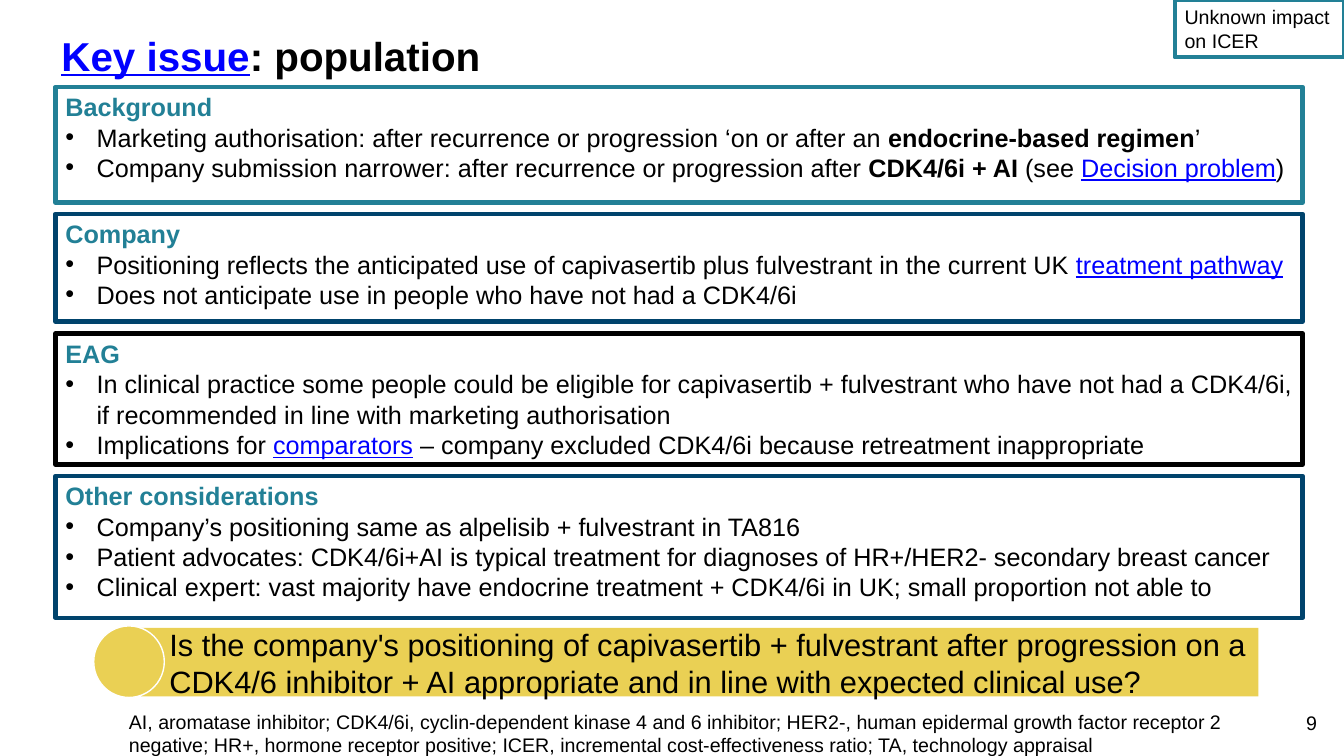
from lxml import etree
from pptx import Presentation
from pptx.dml.color import RGBColor
from pptx.enum.shapes import MSO_SHAPE
from pptx.enum.text import MSO_ANCHOR, MSO_AUTO_SIZE, PP_ALIGN
from pptx.oxml.ns import qn
from pptx.util import Inches, Pt

RECTANGLE, OVAL = MSO_SHAPE.RECTANGLE, MSO_SHAPE.OVAL
TOP, MIDDLE = MSO_ANCHOR.TOP, MSO_ANCHOR.MIDDLE
LEFT, RIGHT = PP_ALIGN.LEFT, PP_ALIGN.RIGHT
NO_AUTOFIT = MSO_AUTO_SIZE.NONE

COLOURS = {
    "text": "000000",
    "link": "0000FF",
    "teal": "228096",
    "navy": "00436C",
    "yellow": "EAD054",
    "white": "FFFFFF",
}

# Run styles used inside paragraphs
RUN_STYLES = {
    "plain": {"colour": "text", "bold": False, "underline": False},
    "bold": {"colour": "text", "bold": True, "underline": False},
    "link": {"colour": "link", "bold": False, "underline": True},
    "heading": {"colour": "teal", "bold": True, "underline": False},
    "title_link": {"colour": "link", "bold": True, "underline": True},
}

# Each panel: top, height, border colour, heading, bullets made of (text, style) runs
PANELS = [
    (0.86, 1.15, "teal", "Background", [
        [("Marketing authorisation: after recurrence or progression ‘on or after an ", "plain"),
         ("endocrine-based regimen", "bold"), ("’", "plain")],
        [("Company submission narrower: after recurrence or progression after ", "plain"),
         ("CDK4/6i + AI ", "bold"), ("(see ", "plain"),
         ("Decision problem", "link"), (")", "plain")],
    ]),
    (2.12, 1.07, "navy", "Company", [
        [("Positioning reflects the anticipated use of capivasertib plus fulvestrant "
          "in the current UK ", "plain"), ("treatment pathway", "link")],
        [("Does not anticipate use in people who have not had a CDK4/6i", "plain")],
    ]),
    (3.31, 1.3, "text", "EAG", [
        [("In clinical practice some people could be eligible for capivasertib + fulvestrant "
          "who have not had a CDK4/6i, if recommended in line with marketing authorisation",
          "plain")],
        [("Implications for ", "plain"), ("comparators", "link"),
         (" – company excluded CDK4/6i because retreatment inappropriate", "plain")],
    ]),
    (4.72, 1.41, "navy", "Other considerations", [
        [("Company’s positioning same as alpelisib + fulvestrant in TA816", "plain")],
        [("Patient advocates: CDK4/6i+AI is typical treatment for diagnoses of HR+/HER2- "
          "secondary breast cancer", "plain")],
        [("Clinical expert: vast majority have endocrine treatment + CDK4/6i in UK; "
          "small proportion not able to", "plain")],
    ]),
]


class SlideBuilder:
    font_name = "Arial"
    bullet_indent = Inches(0.31)

    def __init__(self, presentation):
        self.slide = presentation.slides.add_slide(presentation.slide_layouts[5])

    def colour(self, name):
        return RGBColor.from_string(COLOURS[name])

    def set_frame(self, shape, anchor=TOP, left_inset=0.1):
        frame = shape.text_frame
        values = {
            "word_wrap": True, "auto_size": NO_AUTOFIT, "vertical_anchor": anchor,
            "margin_left": Inches(left_inset), "margin_right": Inches(0.1),
            "margin_top": Inches(0.05), "margin_bottom": Inches(0.05),
        }
        for name, value in values.items():
            setattr(frame, name, value)
        return frame

    def fill_paragraph(self, paragraph, runs, size, align=LEFT, spacing=1.0, bullet=False):
        if bullet:
            properties = paragraph._p.get_or_add_pPr()
            properties.set("marL", str(self.bullet_indent))
            properties.set("indent", str(-self.bullet_indent))
            etree.SubElement(properties, qn("a:buFont"), typeface=self.font_name)
            etree.SubElement(properties, qn("a:buChar"), char="•")
        paragraph.alignment = align
        paragraph.line_spacing = spacing
        for text, style in runs:
            run = paragraph.add_run()
            run.text = text
            values = {"name": self.font_name, "size": Pt(size), **RUN_STYLES[style]}
            run.font.color.rgb = self.colour(values.pop("colour"))
            for name, value in values.items():
                setattr(run.font, name, value)

    def title(self, box, runs, size):
        shape = self.slide.shapes.title
        shape.left, shape.top, shape.width, shape.height = map(Inches, box)
        self.fill_paragraph(self.set_frame(shape).paragraphs[0], runs, size, spacing=0.9)

    def shape(self, kind, box, fill=None, line=None, line_width=3):
        shape = self.slide.shapes.add_shape(kind, *map(Inches, box))
        shape.shadow.inherit = False
        if fill:
            shape.fill.solid()
            shape.fill.fore_color.rgb = self.colour(fill)
        else:
            shape.fill.background()
        if line:
            shape.line.color.rgb = self.colour(line)
            shape.line.width = Pt(line_width)
        else:
            shape.line.fill.background()
        return shape

    def panel(self, top, height, line, heading, bullets):
        shape = self.shape(RECTANGLE, (0.55, top, 12.37, height), line=line)
        frame = self.set_frame(shape)
        self.fill_paragraph(frame.paragraphs[0], [(heading, "heading")], 18)
        for runs in bullets:
            self.fill_paragraph(frame.add_paragraph(), runs, 18, bullet=True)

    def label(self, box, text, size, anchor=TOP, left_inset=0.1, **look):
        frame = self.set_frame(self.shape(RECTANGLE, box, **look), anchor, left_inset)
        self.fill_paragraph(frame.paragraphs[0], [(text, "plain")], size)

    def text(self, box, text, size, **layout):
        frame = self.set_frame(self.slide.shapes.add_textbox(*map(Inches, box)))
        self.fill_paragraph(frame.paragraphs[0], [(text, "plain")], size, **layout)


def main():
    presentation = Presentation()
    presentation.slide_width = Inches(13.33)
    presentation.slide_height = Inches(7.5)
    builder = SlideBuilder(presentation)

    # Title and impact label
    builder.title((0.51, 0.31, 11, 0.55),
                  [("Key issue", "title_link"), (": population", "bold")], 28.8)
    builder.label((11.65, 0, 1.68, 0.57), "Unknown impact on ICER", 14, line="teal")

    # Evidence panels
    for panel in PANELS:
        builder.panel(*panel)

    # Question banner
    builder.label((1.4, 6.23, 11.08, 0.68),
                  "Is the company's positioning of capivasertib + fulvestrant after progression "
                  "on a CDK4/6 inhibitor + AI appropriate and in line with expected clinical use?",
                  22, anchor=MIDDLE, left_inset=0.28, fill="yellow")
    builder.shape(OVAL, (0.93, 6.21, 0.7, 0.71), fill="yellow", line="white", line_width=1)

    # Abbreviations and slide number
    builder.text((1.18, 7.01, 11.71, 0.44),
                 "AI, aromatase inhibitor; CDK4/6i, cyclin-dependent kinase 4 and 6 inhibitor; "
                 "HER2-, human epidermal growth factor receptor 2 negative; HR+, hormone receptor "
                 "positive; ICER, incremental cost-effectiveness ratio; TA, technology appraisal",
                 14, spacing=0.97)
    builder.text((12.65, 7, 0.51, 0.4), "9", 14, align=RIGHT)

    presentation.save("out.pptx")


if __name__ == "__main__":
    main()
